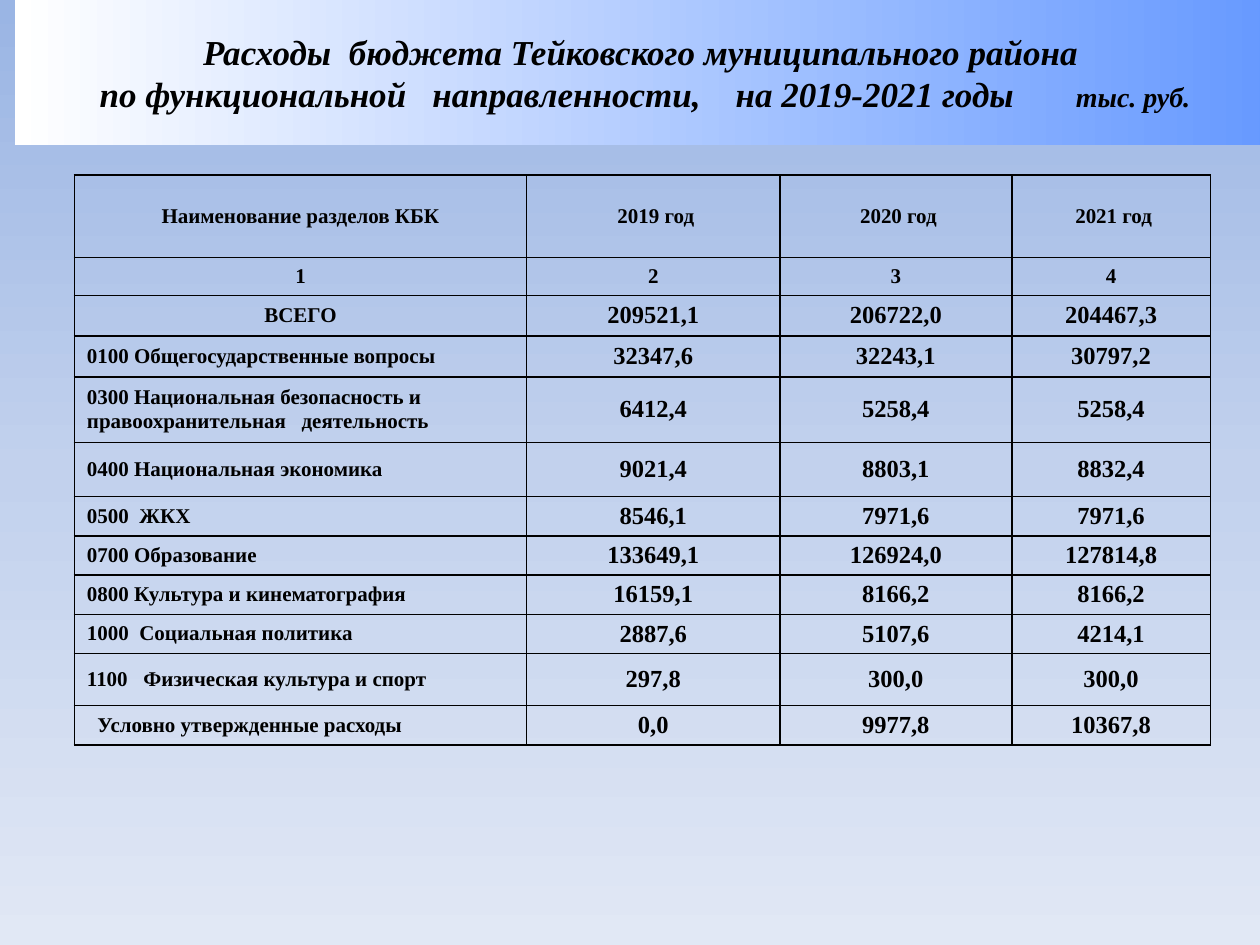
from copy import deepcopy

from lxml.etree import SubElement
from pptx import Presentation
from pptx.dml.color import RGBColor
from pptx.enum.text import MSO_ANCHOR as Anchor, MSO_AUTO_SIZE as AutoSize, PP_ALIGN as Align
from pptx.oxml.ns import qn
from pptx.util import Pt

# Content
TITLE_LINES = [
    [("Расходы  бюджета Тейковского муниципального района ", 20)],
    [("по функциональной   направленности,    на 2019-2021 годы       ", 20),
     ("тыс. руб.", 16)],
]
# Row height, then the cells
ROWS = [
    (47, "Наименование разделов КБК", " 2019 год", " 2020 год", " 2021 год"),
    (21.7, "1", "2", "3", "4"),
    (23.2, "ВСЕГО", "209521,1", "206722,0", "204467,3"),
    (23.4, "0100 Общегосударственные вопросы", "32347,6", "32243,1", "30797,2"),
    (37.4, "0300 Национальная безопасность и правоохранительная   деятельность",
     "6412,4", "5258,4", "5258,4"),
    (31.1, "0400 Национальная экономика", "9021,4", "8803,1", "8832,4"),
    (22.4, "0500  ЖКХ", "8546,1", "7971,6", "7971,6"),
    (22.4, "0700 Образование", "133649,1", "126924,0", "127814,8"),
    (22.4, "0800 Культура и кинематография", "16159,1", "8166,2", "8166,2"),
    (22.4, "1000  Социальная политика", "2887,6", "5107,6", "4214,1"),
    (29.8, "1100   Физическая культура и спорт", "297,8", "300,0", "300,0"),
    (22.4, "  Условно утвержденные расходы", "0,0", "9977,8", "10367,8"),
]
COLUMN_WIDTHS = [258.5, 144.7, 132.5, 113.5]
TOTAL_ROW = 2
BACKGROUND = [(0, "9AB5E4"), (0.5, "C2D1ED"), (1, "E1E8F5")]
BANNER = [(0, "FFFFFF"), (1, "6699FF")]
FONT = "Times New Roman"
BLACK = "000000"


def rgb(value):
    return RGBColor.from_string(value)


def set_gradient(fill, element, stops, angle):
    fill.gradient()
    fill.gradient_angle = angle
    stop_list = next(element.iter(qn("a:gsLst")))
    for _ in stops[2:]:
        stop_list.append(deepcopy(stop_list[-1]))
    for stop, (position, color) in zip(fill.gradient_stops, stops):
        stop.position = position
        stop.color.rgb = rgb(color)


def set_font(font, size, italic=False):
    font.name, font.size = FONT, Pt(size)
    font.bold, font.italic = True, italic
    font.color.rgb = rgb(BLACK)


def add_borders(cell):
    properties = cell._tc.get_or_add_tcPr()
    for index, side in enumerate(("lnL", "lnR", "lnT", "lnB")):
        line = SubElement(properties, qn(f"a:{side}"), w=str(Pt(1)))
        SubElement(SubElement(line, qn("a:solidFill")), qn("a:srgbClr"), val=BLACK)
        properties.insert(index, line)


presentation = Presentation()
presentation.slide_width, presentation.slide_height = Pt(720), Pt(540)
slide = presentation.slides.add_slide(presentation.slide_layouts[5])
set_gradient(slide.background.fill, slide.element, BACKGROUND, 270)

# Title banner
title = slide.shapes.title
title.left, title.top, title.width, title.height = Pt(8.6), Pt(0), Pt(720), Pt(82.8)
set_gradient(title.fill, title.element, BANNER, 0)
frame = title.text_frame
frame.word_wrap, frame.auto_size = True, AutoSize.NONE
frame.vertical_anchor = Anchor.MIDDLE
for index, runs in enumerate(TITLE_LINES):
    paragraph = frame.add_paragraph() if index else frame.paragraphs[0]
    paragraph.alignment = Align.CENTER
    for text, size in runs:
        run = paragraph.add_run()
        run.text = text
        set_font(run.font, size, italic=True)

# Budget table
table = slide.shapes.add_table(
    len(ROWS), len(COLUMN_WIDTHS), Pt(42.5), Pt(100.1),
    Pt(sum(COLUMN_WIDTHS)), Pt(sum(row[0] for row in ROWS))).table
table.first_row = table.horz_banding = False
for column, width in zip(table.columns, COLUMN_WIDTHS):
    column.width = Pt(width)
for row_index, (height, *texts) in enumerate(ROWS):
    table.rows[row_index].height = Pt(height)
    for column_index, text in enumerate(texts):
        cell = table.cell(row_index, column_index)
        is_name = column_index == 0
        is_amount = row_index >= TOTAL_ROW and not is_name
        cell.fill.background()
        add_borders(cell)
        cell.vertical_anchor = Anchor.MIDDLE
        cell.margin_left = cell.margin_right = Pt(7.2 if is_name else 6)
        cell.margin_top = cell.margin_bottom = Pt(3.6 if is_name else 0)
        cell.text = text
        paragraph = cell.text_frame.paragraphs[0]
        left = is_name and row_index > TOTAL_ROW
        paragraph.alignment = Align.LEFT if left else Align.CENTER
        set_font(paragraph.font, 14 if is_amount else 12)

presentation.save("out.pptx")
